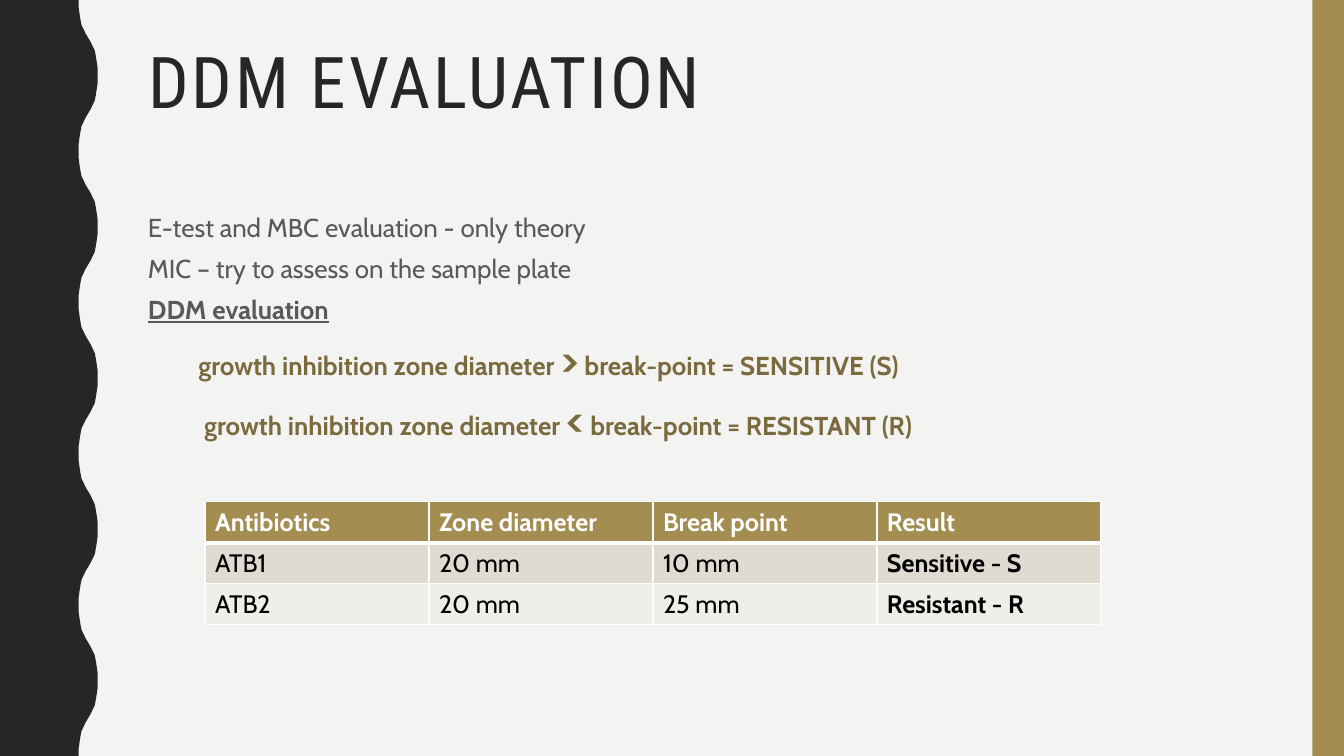
from pptx import Presentation, util as u
from pptx.dml.color import RGBColor
from pptx.enum import shapes, text
from pptx.oxml import parse_xml
from pptx.oxml.ns import nsdecls

theme = {
    "paper": "F3F3F2", "ink": "262626", "gold": "A38D51", "bronze": "7A6A3D",
    "gray": "595959", "white": "FFFFFF", "black": "000000",
    "bands": ["A38D51", "E0DBD0", "F0EEE9"],
    "head": 51, "body": 18.5, "sign": 29.6, "cell": 18,
    "title": "Roboto Condensed", "font": "Cabin",
}


def paint(fill, tone):
    fill.solid()
    fill.fore_color.rgb = RGBColor.from_string(tone)


def write(para, words, tone, size, name=theme["font"], **form):
    run = para.add_run()
    run.text = words
    form.update(name=name, size=u.Pt(size))
    for key, value in form.items():
        setattr(run.font, key, value)
    run.font.color.rgb = RGBColor.from_string(tone)
    return run


deck = Presentation()
deck.slide_width, deck.slide_height = u.Pt(960), u.Pt(540)
slide = deck.slides.add_slide(deck.slide_layouts[5])
paint(slide.background.fill, theme["paper"])

curve = [(56.2, 0), (56.2, 5), (56.9, 10), (57.6, 14.4), (58.3, 18),
         (59.8, 21), (61.2, 24), (63, 27), (64.8, 30), (66.2, 33),
         (67.7, 36), (68.4, 39.6), (69.1, 44), (69.8, 49), (69.8, 54)]
back = [(x, 54 - y) for x, y in reversed(curve)]
edge = []
for turn in range(10):
    half = back if turn % 2 else curve
    edge += [(u.Pt(x), u.Pt(y + 54 * turn)) for x, y in half]
pen = slide.shapes.build_freeform(0, 0)
pen.add_line_segments(edge + [(0, u.Pt(540))], close=True)
wave = pen.convert_to_shape()
bar = slide.shapes.add_shape(
    shapes.MSO_SHAPE.RECTANGLE, u.Pt(937.5), 0, u.Pt(22.5), u.Pt(540))
for shape, tone in [(wave, theme["ink"]), (bar, theme["gold"])]:
    shape.shadow.inherit = False
    paint(shape.fill, tone)
    shape.line.fill.background()

title = slide.shapes.title
place = {"left": 98.6, "top": 30.2, "width": 801.4, "height": 117.4}
for key, value in place.items():
    setattr(title, key, u.Pt(value))
body = slide.shapes.add_textbox(u.Pt(98.6), u.Pt(147.6), u.Pt(801.4), u.Pt(180.7))
frame = {"word_wrap": True, "auto_size": text.MSO_AUTO_SIZE.NONE,
         "vertical_anchor": text.MSO_ANCHOR.TOP}
for box in (title, body):
    for key, value in frame.items():
        setattr(box.text_frame, key, value)

para = title.text_frame.paragraphs[0]
para.alignment, para.line_spacing = text.PP_ALIGN.LEFT, 0.9
run = write(para, "DDM EVALUATION", theme["ink"], theme["head"], theme["title"])
run.font._element.set("spc", "200")

plain = (theme["gray"], theme["body"], {})
strong = (theme["gray"], theme["body"], {"bold": True, "underline": True})
rule = (theme["bronze"], theme["body"], {"bold": True})
sign = (theme["bronze"], theme["sign"], {"bold": True})
lines = [
    [("E-test and MBC evaluation - only theory", plain)],
    [("MIC – try to assess on the sample plate", plain)],
    [("DDM evaluation", strong)],
    [("\t", plain), ("growth inhibition zone diameter ", rule), (">", sign),
     (" break-point = SENSITIVE (S)", rule)],
    [("\t growth inhibition zone diameter ", rule), ("<", sign),
     (" break-point = RESISTANT (R)", rule)],
]
for row, line in enumerate(lines):
    para = body.text_frame.add_paragraph() if row else body.text_frame.paragraphs[0]
    para.space_before = u.Pt(7 if row else 0)
    for words, (tone, size, form) in line:
        write(para, words, tone, size, **form)

data = [
    ["Antibiotics", "Zone diameter", "Break point", "Result"],
    ["ATB1", "20 mm", "10 mm", "Sensitive - S"],
    ["ATB2", "20 mm", "25 mm", "Resistant - R"],
]
table = slide.shapes.add_table(
    3, 4, u.Pt(146.4), u.Pt(358.4), u.Pt(640), u.Pt(87.9)).table
for row, line in enumerate(data):
    table.rows[row].height = u.Pt(29.3)
    for col, words in enumerate(line):
        cell = table.cell(row, col)
        props = cell._tc.get_or_add_tcPr()
        for side in "LRTB":
            thick = (row, side) in [(0, "B"), (1, "T")]
            props.append(parse_xml(
                f'<a:ln{side} {nsdecls("a")} w="{u.Pt(3 if thick else 1)}">'
                f'<a:solidFill><a:srgbClr val="{theme["white"]}"/></a:solidFill>'
                f'</a:ln{side}>'))
        paint(cell.fill, theme["bands"][row])
        write(cell.text_frame.paragraphs[0], words,
              theme["black" if row else "white"], theme["cell"],
              bold=row == 0 or col == 3)

deck.save("out.pptx")
